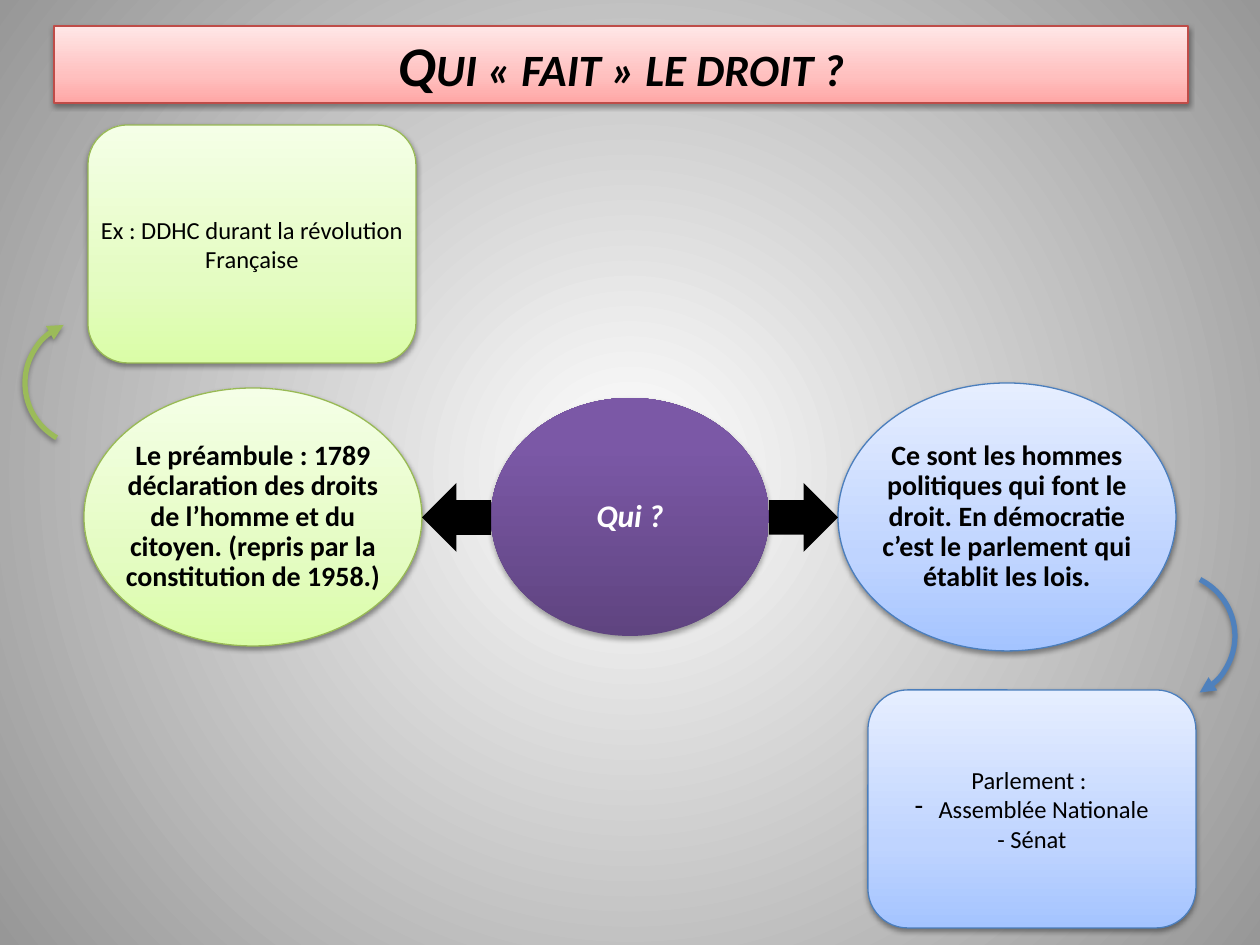
from dataclasses import dataclass

from pptx import Presentation
from pptx import util as u
from pptx.dml.color import RGBColor
from pptx.enum import shapes, text
from pptx.oxml import parse_xml
from pptx.oxml.ns import nsdecls, qn

PX = 914400 // 126
WIDTH, HEIGHT = 1260, 945
MIDDLE_Y = 517
Stops = list[tuple[int, str]]


@dataclass(frozen=True)
class Theme:
    stops: Stops
    line: str | None
    shadow: tuple[int, float]  # opacity in percent, distance in points


@dataclass(frozen=True)
class Bubble:
    words: str
    left: int
    width: int
    height: int
    insets: tuple[int, int]
    theme: Theme
    size: int = 16
    color: str = "000000"
    italic: bool = False


@dataclass(frozen=True)
class Detail:
    lines: list[str]
    left: int
    top: int
    theme: Theme


@dataclass(frozen=True)
class CurvedArrow:
    left: int
    top: int
    rotation: float
    color: str


SOFT = (38, 1.6)
STRONG = (35, 1.8)
RED = Theme([(0, "FFA6A5"), (35, "FFC0BF"), (100, "FFE7E7")], "BF4C48", SOFT)
GREEN = Theme([(0, "DAFDA7"), (35, "E4FCC2"), (100, "F5FFE7")], "98B955", SOFT)
BLUE = Theme([(0, "A4C4FF"), (35, "BFD4FF"), (100, "E6EEFF")], "4B7EBC", SOFT)
PURPLE = Theme([(0, "5F4480"), (80, "7B58A6"), (100, "7C57A8")], None, STRONG)

QUESTION = Bubble("Qui ?", 491, 278, 238, (44, 38), PURPLE, 18, "FFFFFF", True)
PREAMBLE = Bubble(
    "Le préambule : 1789 déclaration des droits de l’homme et du citoyen. "
    "(repris par la constitution de 1958.)", 84, 338, 258, (38, 30), GREEN)
POLITICIANS = Bubble(
    "Ce sont les hommes politiques qui font le droit. En démocratie "
    "c’est le parlement qui établit les lois.", 838, 338, 268, (39, 38), BLUE)
DETAILS = [
    Detail(["Ex : DDHC durant la révolution Française"], 88, 125, GREEN),
    Detail(["Parlement : ", "Assemblée Nationale", "- Sénat"], 868, 690, BLUE),
]
CURVED_ARROWS = [
    CurvedArrow(25, 320, 242.8, "9BBB59"),
    CurvedArrow(1109, 573, 59.5, "4F81BD"),
]


def rgb(color: str) -> RGBColor:
    return RGBColor.from_string(color)


def px(*lengths: int) -> list[int]:
    return [length * PX for length in lengths]


def set_gradient(fill, owner, stops: Stops, direction: str) -> None:
    fill.gradient()
    gradient = owner.find(".//" + qn("a:gradFill"))
    marks = "".join(f'<a:gs pos="{pos * 1000}"><a:srgbClr val="{color}"/></a:gs>'
                    for pos, color in stops)
    gradient.getparent().replace(gradient, parse_xml(
        f'<a:gradFill {nsdecls("a")} rotWithShape="1"><a:gsLst>{marks}</a:gsLst>'
        f'{direction}</a:gradFill>'))


def add_shadow(shape, opacity: int, distance: float) -> None:
    shape.shadow.inherit = False
    effects = shape.element.spPr.find(qn("a:effectLst"))
    effects.append(parse_xml(
        f'<a:outerShdw {nsdecls("a")} blurRad="{u.Pt(3.1)}" dist="{u.Pt(distance)}" '
        f'dir="5400000" rotWithShape="0"><a:srgbClr val="000000">'
        f'<a:alpha val="{opacity * 1000}"/></a:srgbClr></a:outerShdw>'))


def apply_theme(shape, theme: Theme) -> None:
    set_gradient(shape.fill, shape.element, theme.stops, '<a:lin ang="16200000" scaled="0"/>')
    if theme.line:
        shape.line.color.rgb = rgb(theme.line)
        shape.line.width = u.Pt(0.75)
    else:
        shape.line.fill.background()
    add_shadow(shape, *theme.shadow)


def set_words(shape, lines: list[str], size: int, color: str = "000000",
              bold: bool = False, italic: bool = False) -> None:
    frame = shape.text_frame
    frame.text = "\n".join(lines)
    frame.word_wrap = True
    frame.auto_size = text.MSO_AUTO_SIZE.NONE
    frame.vertical_anchor = text.MSO_ANCHOR.MIDDLE
    for paragraph in frame.paragraphs:
        paragraph.alignment = text.PP_ALIGN.CENTER
        for run in paragraph.runs:
            font = run.font
            font.name, font.size = "Calibri", u.Pt(size)
            font.bold, font.italic = bold, italic
            font.color.rgb = rgb(color)


def set_insets(shape, across: int, down: int) -> None:
    frame = shape.text_frame
    frame.margin_left = frame.margin_right = across * PX
    frame.margin_top = frame.margin_bottom = down * PX


def add_bubble(slide, bubble: Bubble) -> None:
    top = MIDDLE_Y - bubble.height // 2
    shape = slide.shapes.add_shape(
        shapes.MSO_SHAPE.OVAL, *px(bubble.left, top, bubble.width, bubble.height))
    # An ellipse whose text area is its whole bounding box
    arcs = "".join(f'<a:arcTo wR="100" hR="100" stAng="{start}" swAng="10800000"/>'
                   for start in (10800000, 0))
    preset = shape.element.spPr.find(qn("a:prstGeom"))
    preset.getparent().replace(preset, parse_xml(
        f'<a:custGeom {nsdecls("a")}><a:avLst/><a:gdLst/><a:ahLst/><a:cxnLst/>'
        '<a:rect l="0" t="0" r="r" b="b"/><a:pathLst><a:path w="200" h="200">'
        f'<a:moveTo><a:pt x="0" y="100"/></a:moveTo>{arcs}<a:close/>'
        '</a:path></a:pathLst></a:custGeom>'))
    apply_theme(shape, bubble.theme)
    set_words(shape, [bubble.words], bubble.size, bubble.color, True, bubble.italic)
    set_insets(shape, *bubble.insets)
    shape.text_frame.paragraphs[0].line_spacing = 0.9


def add_block_arrow(slide, start: int, end: int, rotation: int) -> None:
    size = end - start
    arrow = slide.shapes.add_shape(
        shapes.MSO_SHAPE.UP_ARROW, *px(start, MIDDLE_Y - size // 2, size, size))
    arrow.rotation = rotation
    arrow.fill.solid()
    arrow.fill.fore_color.rgb = rgb("000000")
    arrow.line.fill.background()
    arrow.shadow.inherit = False


def add_detail(slide, detail: Detail):
    box = slide.shapes.add_shape(
        shapes.MSO_SHAPE.ROUNDED_RECTANGLE, *px(detail.left, detail.top, 328, 238))
    apply_theme(box, detail.theme)
    set_words(box, detail.lines, 14)
    set_insets(box, 0, 0)
    return box


def add_dash_bullet(paragraph) -> None:
    properties = paragraph._p.get_or_add_pPr()
    properties.set("marL", "171450")
    properties.set("indent", "-171450")
    properties.append(parse_xml(f'<a:buChar {nsdecls("a")} char="-"/>'))


def add_curved_arrow(slide, curve: CurvedArrow) -> None:
    arc = slide.shapes.add_shape(shapes.MSO_SHAPE.ARC, *px(curve.left, curve.top, 126, 126))
    arc.adjustments[0], arc.adjustments[1] = 142.18, 2.64
    arc.rotation = curve.rotation
    arc.fill.background()
    arc.line.color.rgb = rgb(curve.color)
    arc.line.width = u.Pt(3)
    arc.element.spPr.find(qn("a:ln")).append(
        parse_xml(f'<a:tailEnd {nsdecls("a")} type="triangle"/>'))
    add_shadow(arc, *STRONG)


def main() -> None:
    deck = Presentation()
    deck.slide_width, deck.slide_height = u.Inches(10), u.Inches(7.5)
    slide = deck.slides.add_slide(deck.slide_layouts[5])
    set_gradient(slide.background.fill, slide.element, [(0, "FFFFFF"), (100, "979797")],
                 '<a:path path="circle"><a:fillToRect l="50000" t="50000" r="50000" '
                 'b="50000"/></a:path>')

    # Title banner
    title = slide.shapes.title
    title.left, title.top, title.width, title.height = px(54, 26, 1134, 77)
    apply_theme(title, RED)
    set_words(title, ["Qui « fait » le droit ?"], 32, bold=True, italic=True)
    title.text_frame.paragraphs[0].runs[0].font._element.set("cap", "small")

    # Question with its two answers
    for bubble in (QUESTION, PREAMBLE, POLITICIANS):
        add_bubble(slide, bubble)
    add_block_arrow(slide, PREAMBLE.left + PREAMBLE.width, QUESTION.left, 270)
    add_block_arrow(slide, QUESTION.left + QUESTION.width, POLITICIANS.left, 90)

    # Details of each answer
    example, parliament = [add_detail(slide, detail) for detail in DETAILS]
    add_dash_bullet(parliament.text_frame.paragraphs[1])
    for curve in CURVED_ARROWS:
        add_curved_arrow(slide, curve)

    deck.save("out.pptx")


if __name__ == "__main__":
    main()
